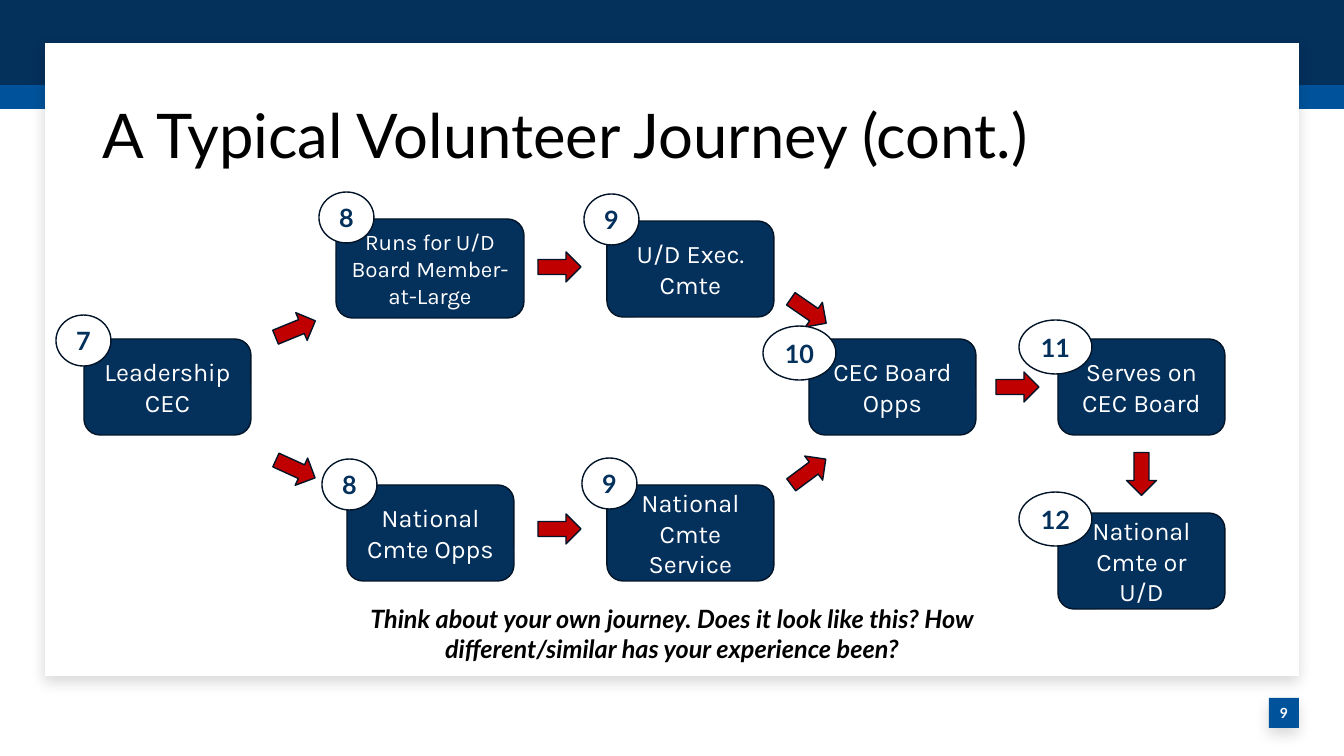
from lxml.etree import SubElement
from pptx import Presentation
from pptx.dml.color import RGBColor
from pptx.enum.shapes import MSO_SHAPE as Shape
from pptx.enum.text import MSO_ANCHOR as Anchor, PP_ALIGN as Align
from pptx.oxml.ns import qn
from pptx.util import Pt

NAVY = RGBColor(0x04, 0x30, 0x5C)
BLUE = RGBColor(0x00, 0x53, 0x9B)
RED = RGBColor(0xC0, 0x00, 0x00)
OUTLINE = RGBColor(0x02, 0x15, 0x28)
WHITE = RGBColor(0xFF, 0xFF, 0xFF)
BLACK = RGBColor(0x00, 0x00, 0x00)

EMU_PER_PX = 914400 / 100.8
WIDTH, HEIGHT = 1344, 756
BOX = (167, 96)
ARROW = (43, 30)
BADGE = (55, 51)
WIDE_BADGE = (73, 54)

STEPS = [
    ("National Cmte Opps", 347, 485),
    ("U/D Exec. Cmte", 607, 221),
    ("National Cmte Service", 607, 485),
    ("CEC Board Opps", 809, 339),
    ("Leadership CEC", 84, 339),
    ("Serves on CEC Board", 1058, 339),
    ("National Cmte or U/D", 1058, 513),
]
ARROWS = [
    (274, 454, 24.5), (274, 314, 337.7), (538, 252, 0), (538, 514, 0),
    (996, 372, 0), (787, 296, 34.6), (787, 457, 323.3), (1120, 459, 90),
]
BADGES = [
    ("7", 56, 315), ("8", 319, 192), ("8", 322, 459), ("9", 584, 194),
    ("9", 582, 458), ("10", 763, 326), ("11", 1019, 320), ("12", 1019, 492),
]


def px(*lengths):
    return [round(length * EMU_PER_PX) for length in lengths]


class JourneySlide:
    heading_font = "Lato"
    step_font = "Karla"

    def __init__(self, presentation):
        self.slide = presentation.slides.add_slide(presentation.slide_layouts[6])

    def shape(self, kind, left, top, width, height, fill, outlined=False):
        shape = self.slide.shapes.add_shape(kind, *px(left, top, width, height))
        shape.shadow.inherit = False
        shape.fill.solid()
        shape.fill.fore_color.rgb = fill
        if outlined:
            shape.line.color.rgb = OUTLINE
            shape.line.width = Pt(1)
        else:
            shape.line.fill.background()
        return shape

    def label(self, shape, text, size, font_name, color, align=Align.CENTER,
              anchor=Anchor.MIDDLE, bold=False, italic=False):
        frame = shape.text_frame
        frame.word_wrap = True
        frame.vertical_anchor = anchor
        frame.text = text
        paragraph = frame.paragraphs[0]
        paragraph.alignment = align
        font = paragraph.runs[0].font
        font.name = font_name
        font.size = Pt(size)
        font.bold = bold
        font.italic = italic
        font.color.rgb = color
        return paragraph

    def band(self, top, height, color):
        self.shape(Shape.RECTANGLE, 0, top, WIDTH, height, color)

    def raised(self, left, top, width, height, color):
        shape = self.shape(Shape.RECTANGLE, left, top, width, height, color)
        effects = shape._element.spPr.find(qn("a:effectLst"))
        shadow = SubElement(effects, qn("a:outerShdw"), blurRad=str(Pt(10)),
                            dist=str(Pt(5)), dir="5400000", algn="t", rotWithShape="0")
        tint = SubElement(shadow, qn("a:srgbClr"), val=str(BLACK))
        SubElement(tint, qn("a:alpha"), val="15000")
        return shape

    def page_number(self, text, left, top, side):
        shape = self.raised(left, top, side, side, BLUE)
        frame = shape.text_frame
        frame.margin_left = frame.margin_right = 0
        frame.margin_top = frame.margin_bottom = 0
        self.label(shape, text, 10, self.heading_font, WHITE, bold=True)

    def text(self, text, left, top, width, height, size, **style):
        box = self.slide.shapes.add_textbox(*px(left, top, width, height))
        return self.label(box, text, size, self.heading_font, BLACK, **style)

    def step(self, text, left, top, width=BOX[0], height=BOX[1], size=18):
        shape = self.shape(Shape.ROUNDED_RECTANGLE, left, top, width, height, NAVY, True)
        self.label(shape, text, size, self.step_font, WHITE)

    def arrow(self, left, top, rotation):
        shape = self.shape(Shape.RIGHT_ARROW, left, top, *ARROW, RED, True)
        shape.rotation = rotation

    def badge(self, number, left, top):
        size = BADGE if len(number) == 1 else WIDE_BADGE
        shape = self.shape(Shape.OVAL, left, top, *size, WHITE, True)
        self.label(shape, number, 18, self.heading_font, NAVY, bold=True)


def main():
    presentation = Presentation()
    presentation.slide_width, presentation.slide_height = px(WIDTH, HEIGHT)
    journey = JourneySlide(presentation)

    journey.band(59, 50, BLUE)
    journey.band(0, 85, NAVY)
    journey.raised(45, 43, 1254, 633, WHITE)
    journey.page_number("9", 1269, 698, 30)
    title = journey.text("A Typical Volunteer Journey (cont.)", 93, 66, 1159, 146,
                         44, align=Align.LEFT)
    title.line_spacing = 0.9

    journey.step("Runs for U/D Board Member-at-Large", 336, 219, 188, 99, 16)
    for step in STEPS:
        journey.step(*step)
    for arrow in ARROWS:
        journey.arrow(*arrow)
    for badge in BADGES:
        journey.badge(*badge)

    journey.text("Think about your own journey. Does it look like this? "
                 "How different/similar has your experience been?",
                 336, 598, 672, 72, 18, anchor=Anchor.TOP, bold=True, italic=True)
    presentation.save("out.pptx")


if __name__ == "__main__":
    main()
